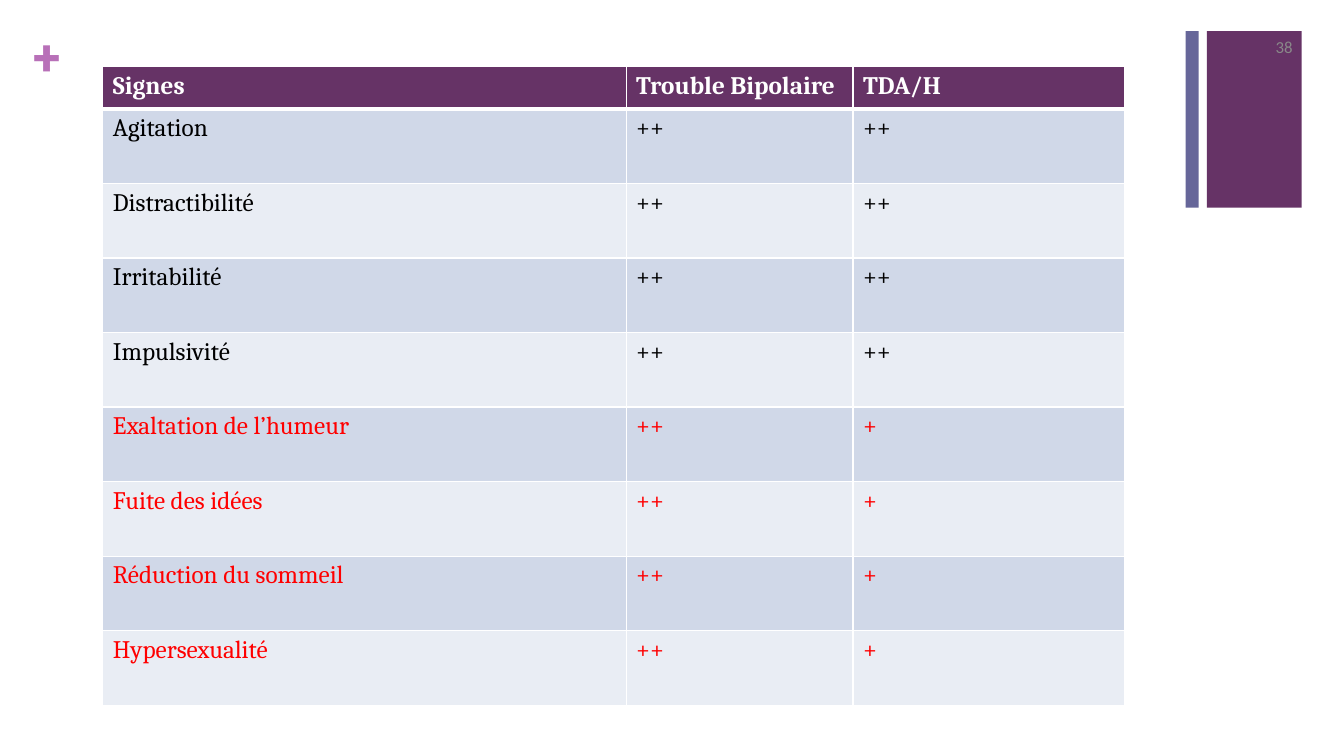
from lxml import etree
from pptx import Presentation
from pptx import util as u
from pptx.dml.color import RGBColor
from pptx.enum import shapes, text
from pptx.oxml.ns import qn

# Content
HEAD = ("Signes", "Trouble Bipolaire", "TDA/H")
SHARED = ("Agitation", "Distractibilité", "Irritabilité", "Impulsivité")
MANIC = ("Exaltation de l’humeur", "Fuite des idées",
         "Réduction du sommeil", "Hypersexualité")
ROWS = ([(HEAD, "head")]
        + [((sign, "++", "++"), "body") for sign in SHARED]
        + [((sign, "++", "+"), "alert") for sign in MANIC])

# Theme: colours and type
THEME = {
    "plum": "663366", "slate": "666699", "rule": "FFFFFF",
    "bands": ("D0D8E8", "E9EDF4"),
    "head": dict(name="Cambria", size=18, bold=True, color="FFFFFF"),
    "body": dict(name="Cambria", size=18, bold=False, color="000000"),
    "alert": dict(name="Cambria", size=18, bold=False, color="FF0000"),
    "plus": dict(name="Roboto Slab", size=36, bold=True, color="B870B8"),
    "page": dict(name="Calibri", size=12, bold=False, color="898989"),
}

# Layout, in inches
COLS = (5.19, 2.25, 2.69)
TALL = [0.42] + [0.74] * (len(ROWS) - 1)
BARS = (((11.97, 0.31, 0.94, 1.75), "plum"), ((11.76, 0.31, 0.13, 1.75), "slate"))
MARGINS = ("margin_left", "margin_top", "margin_right", "margin_bottom")


def inch(box):
    return [u.Inches(n) for n in box]


def write(frame, words, style):
    para = frame.paragraphs[0]
    run = para.add_run()
    run.text = words
    for key, val in THEME[style].items():
        if key == "color":
            run.font.color.rgb = RGBColor.from_string(val)
        else:
            setattr(run.font, key, u.Pt(val) if key == "size" else val)
    return para


def paint(item, color):
    item.fill.solid()
    item.fill.fore_color.rgb = RGBColor.from_string(color)


def edge(cell, widths):
    props = cell._tc.get_or_add_tcPr()
    for spot, (side, width) in enumerate(widths.items()):
        line = etree.Element(qn("a:ln" + side), w=str(u.Pt(width)))
        fill = etree.SubElement(line, qn("a:solidFill"))
        etree.SubElement(fill, qn("a:srgbClr"), val=THEME["rule"])
        props.insert(spot, line)


def label(box, words, style, **form):
    frame = slide.shapes.add_textbox(*inch(box)).text_frame
    for key, val in form.items():
        setattr(frame, key, val)
    return write(frame, words, style)


deck = Presentation()
deck.slide_width, deck.slide_height = inch((13.33, 7.5))
slide = deck.slides.add_slide(deck.slide_layouts[6])

# Corner bars
for box, color in BARS:
    bar = slide.shapes.add_shape(shapes.MSO_SHAPE.RECTANGLE, *inch(box))
    bar.shadow.inherit = False
    paint(bar, THEME[color])
    bar.line.fill.background()

# Plus sign and page number
label((0.33, 0.25, 0.38, 0.61), "+", "plus", word_wrap=True,
      **dict.fromkeys(MARGINS, 0))
page = label((12.11, 0.26, 0.81, 0.4), "38", "page", word_wrap=True,
             vertical_anchor=text.MSO_ANCHOR.MIDDLE)
page.alignment = text.PP_ALIGN.RIGHT

# Table of signs
grid = slide.shapes.add_table(len(ROWS), len(COLS), *inch(
    (1.02, 0.66, sum(COLS), sum(TALL)))).table
for col, width in zip(grid.columns, COLS):
    col.width = u.Inches(width)
for r, (words, style) in enumerate(ROWS):
    grid.rows[r].height = u.Inches(TALL[r])
    color = THEME["bands"][(r - 1) % 2] if r else THEME["plum"]
    for c, word in enumerate(words):
        cell = grid.cell(r, c)
        write(cell.text_frame, word, style)
        paint(cell, color)
        edge(cell, {"L": 1, "R": 1, "T": 3 if r == 1 else 1, "B": 1 if r else 3})

deck.save("out.pptx")
